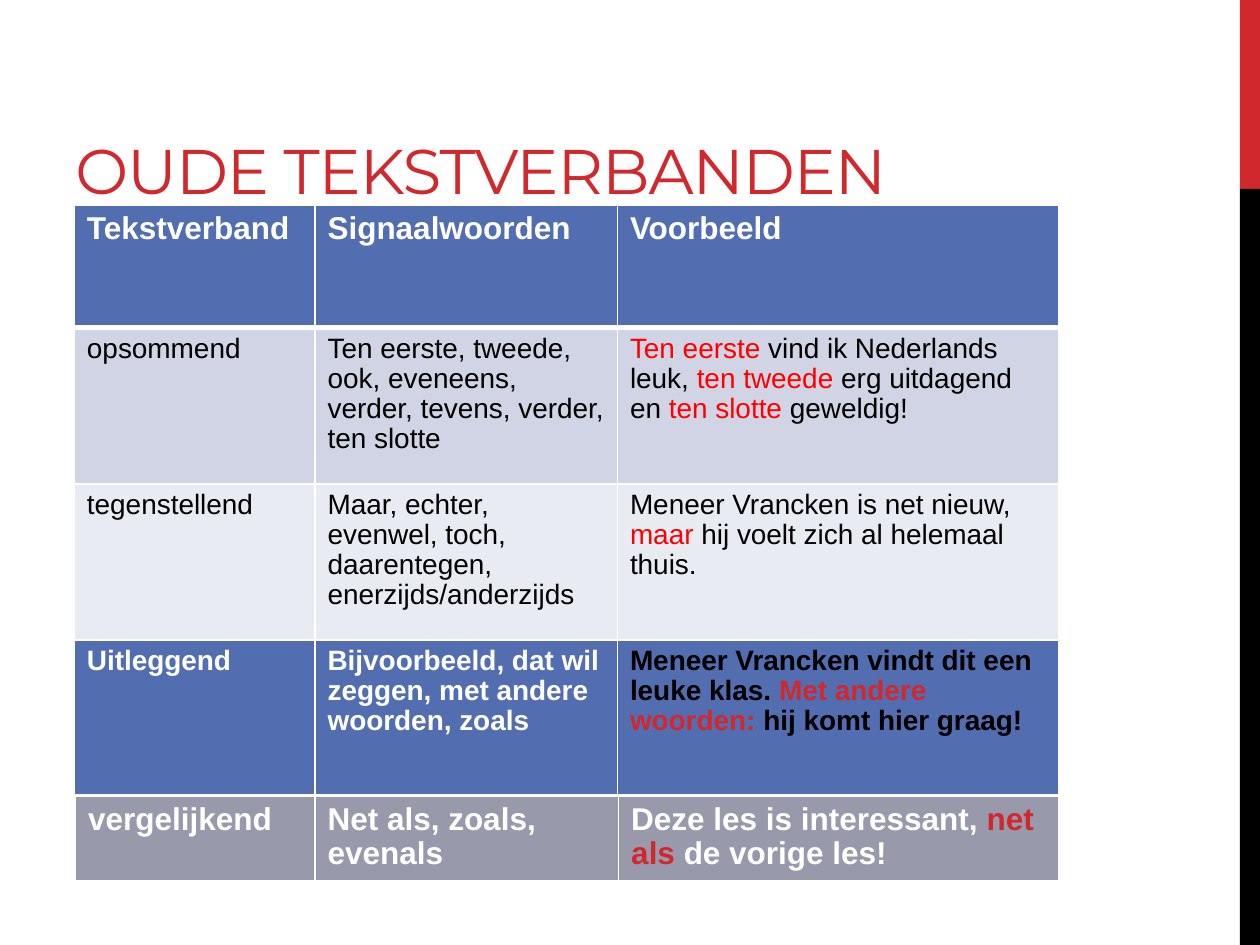
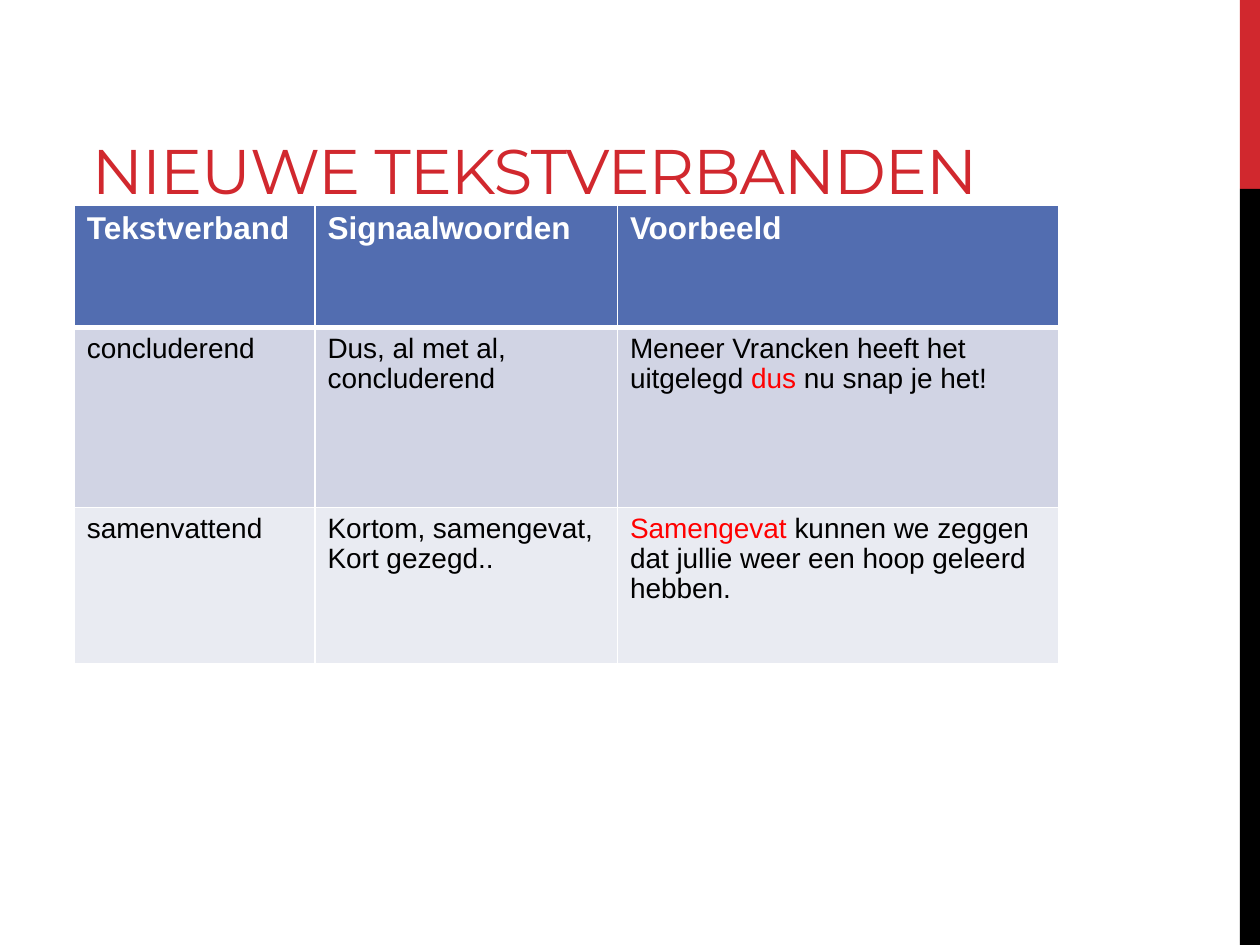
from dataclasses import dataclass

from lxml.etree import SubElement
from pptx import Presentation
from pptx.dml.color import RGBColor
from pptx.enum.shapes import MSO_SHAPE
from pptx.enum.text import MSO_ANCHOR
from pptx.oxml.ns import qn
from pptx.util import Inches, Pt


@dataclass(frozen=True)
class Theme:
    red: str = "D1282E"
    bright_red: str = "FF0000"
    black: str = "000000"
    white: str = "FFFFFF"
    blue: str = "526DB0"
    light: str = "D1D4E4"
    pale: str = "E9EBF2"
    gray: str = "989AAC"
    title_font: str = "Montserrat"
    body_font: str = "Arial"
    title_size: int = 36
    large_size: int = 18
    body_size: int = 16


theme = Theme()


def write_text(text_frame, text, *, font, size, color, highlight=None,
               bold=False, line_spacing=None, letter_spacing=None):
    """Write one paragraph per line; parts between asterisks get the highlight colour."""
    text_frame.word_wrap = True
    for index, line in enumerate(text.split("\n")):
        paragraph = text_frame.add_paragraph() if index else text_frame.paragraphs[0]
        paragraph.line_spacing = line_spacing
        for part_index, part in enumerate(line.split("*")):
            if not part:
                continue
            run = paragraph.add_run()
            run.text = part
            run.font.name = font
            run.font.size = Pt(size)
            run.font.bold = bold
            run.font.color.rgb = RGBColor.from_string(highlight if part_index % 2 else color)
            if letter_spacing is not None:
                run._r.get_or_add_rPr().set("spc", str(round(letter_spacing * 100)))


def set_borders(cell, bottom_width):
    """Draw white cell borders, in the order the file format asks for."""
    properties = cell._tc.get_or_add_tcPr()
    for side, width in (("L", 1), ("R", 1), ("T", 1), ("B", bottom_width)):
        line = SubElement(properties, qn(f"a:ln{side}"), w=str(Pt(width)))
        fill = SubElement(line, qn("a:solidFill"))
        SubElement(fill, qn("a:srgbClr"), val=theme.white)


# Row styles: fill, text colour, example colour, highlight, size, bold, bottom border
header = (theme.blue, theme.white, theme.white, None, theme.large_size, True, 3)
light_row = (theme.light, theme.black, theme.black, theme.bright_red, theme.body_size, False, 1)
pale_row = (theme.pale, theme.black, theme.black, theme.bright_red, theme.body_size, False, 1)
blue_row = (theme.blue, theme.white, theme.black, theme.red, theme.body_size, True, 3)
gray_row = (theme.gray, theme.white, theme.white, theme.red, theme.large_size, True, 3)

heading = (header, 0.97, ("Tekstverband", "Signaalwoorden", "Voorbeeld"))
main_columns = (1.91, 2.4, 3.5)

# Each slide: title, left title inset, tables; each table: left, top, columns, rows
slides = [
    ("OUDE TEKSTVERBANDEN", 0.1, [
        (0.59, 1.63, main_columns, [
            heading,
            (light_row, 1.24, (
                "opsommend",
                "Ten eerste, tweede, ook, eveneens, verder, tevens, verder, ten slotte",
                "*Ten eerste *vind ik Nederlands leuk, *ten tweede* erg uitdagend en "
                "*ten slotte *geweldig!")),
            (pale_row, 1.24, (
                "tegenstellend",
                "Maar, echter, evenwel, toch, daarentegen, enerzijds/anderzijds",
                "Meneer Vrancken is net nieuw, *maar* hij voelt zich al helemaal thuis.")),
        ]),
        (0.59, 5.08, main_columns, [
            (blue_row, 1.24, (
                "Uitleggend",
                "Bijvoorbeeld, dat wil zeggen, met andere woorden, zoals",
                "Meneer Vrancken vindt dit een leuke klas. *Met andere woorden:* "
                "hij komt hier graag!")),
        ]),
        (0.6, 6.32, (1.9, 2.41, 3.49), [
            (gray_row, 0.65, (
                "vergelijkend",
                "Net als, zoals, evenals",
                "Deze les is interessant, *net als *de vorige les!")),
        ]),
    ]),
    ("NIEUWE TEKSTVERBANDEN", 0.23, [
        (0.59, 1.63, main_columns, [
            heading,
            (light_row, 1.43, (
                "concluderend",
                "Dus, al met al, concluderend",
                "Meneer Vrancken heeft het uitgelegd *dus* nu snap je het!")),
            (pale_row, 1.24, (
                "samenvattend",
                "Kortom, samengevat,\nKort gezegd..",
                "*Samengevat* kunnen we zeggen dat jullie weer een hoop geleerd hebben.")),
        ]),
    ]),
]

presentation = Presentation()
presentation.slide_width = Inches(10)
presentation.slide_height = Inches(7.5)

for title, title_inset, tables in slides:
    slide = presentation.slides.add_slide(presentation.slide_layouts[6])

    # Bands along the right edge
    for top, height, color in ((0, 1.5, theme.red), (1.5, 6, theme.black)):
        band = slide.shapes.add_shape(MSO_SHAPE.RECTANGLE, Inches(9.84), Inches(top),
                                      Inches(0.16), Inches(height))
        band.shadow.inherit = False
        band.fill.solid()
        band.fill.fore_color.rgb = RGBColor.from_string(color)
        band.line.fill.background()

    # Title
    title_box = slide.shapes.add_textbox(Inches(0.5), Inches(0.17), Inches(8.24), Inches(1.5))
    title_frame = title_box.text_frame
    title_frame.vertical_anchor = MSO_ANCHOR.BOTTOM
    title_frame.margin_left = Inches(title_inset)
    title_frame.margin_bottom = Inches(0.03)
    write_text(title_frame, title, font=theme.title_font, size=theme.title_size,
               color=theme.red, letter_spacing=-0.6)

    # Tables
    for left, top, columns, rows in tables:
        table = slide.shapes.add_table(
            len(rows), len(columns), Inches(left), Inches(top), Inches(sum(columns)),
            Inches(sum(height for _, height, _ in rows))).table
        table.horz_banding = False
        for column, width in zip(table.columns, columns):
            column.width = Inches(width)
        for row, (style, height, texts) in zip(table.rows, rows):
            fill, color, example_color, highlight, size, bold, bottom_width = style
            row.height = Inches(height)
            for cell, text, text_color in zip(row.cells, texts, (color, color, example_color)):
                set_borders(cell, bottom_width)
                cell.fill.solid()
                cell.fill.fore_color.rgb = RGBColor.from_string(fill)
                write_text(cell.text_frame, text, font=theme.body_font, size=size,
                           color=text_color, highlight=highlight, bold=bold,
                           line_spacing=0.97)

presentation.save("out.pptx")
